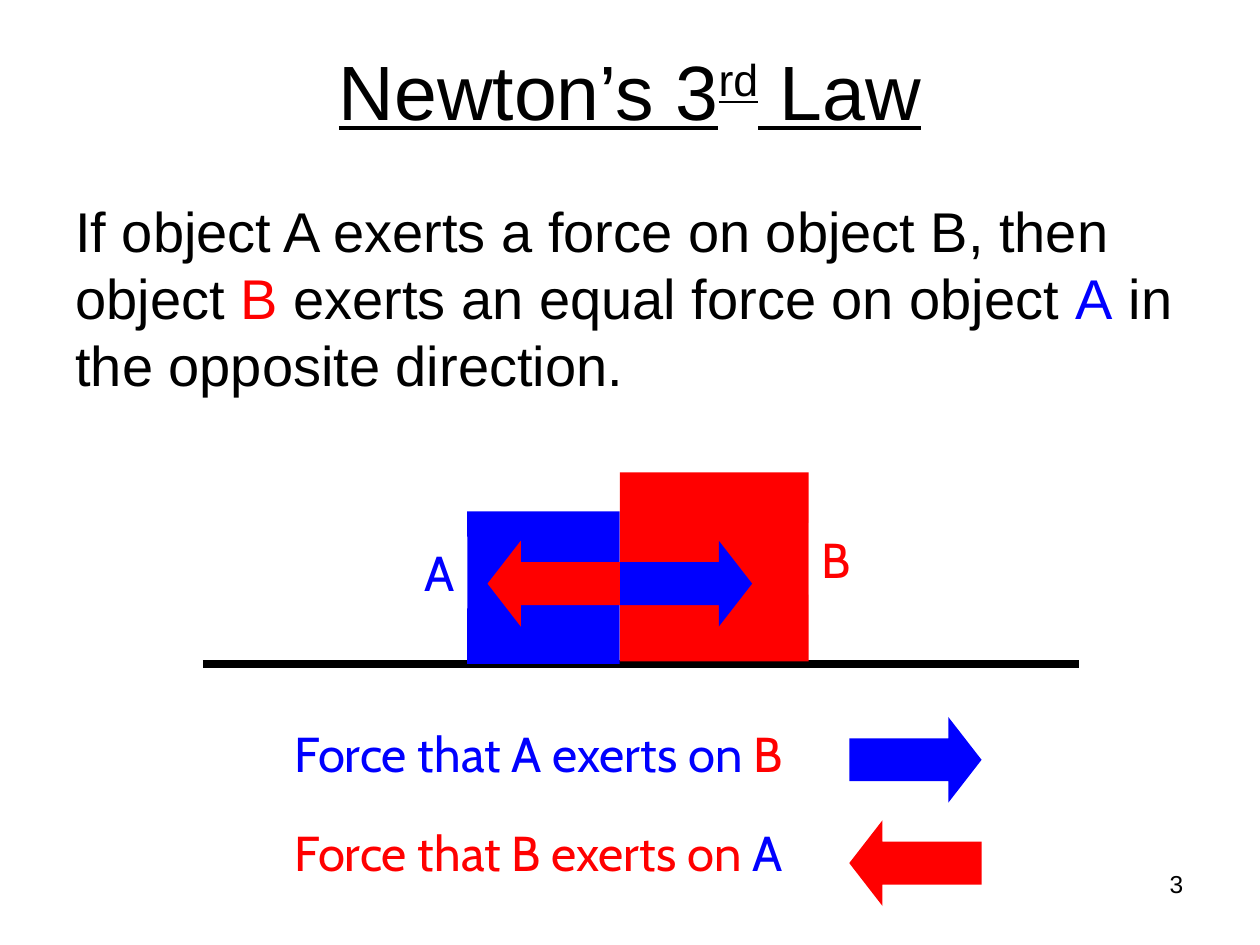
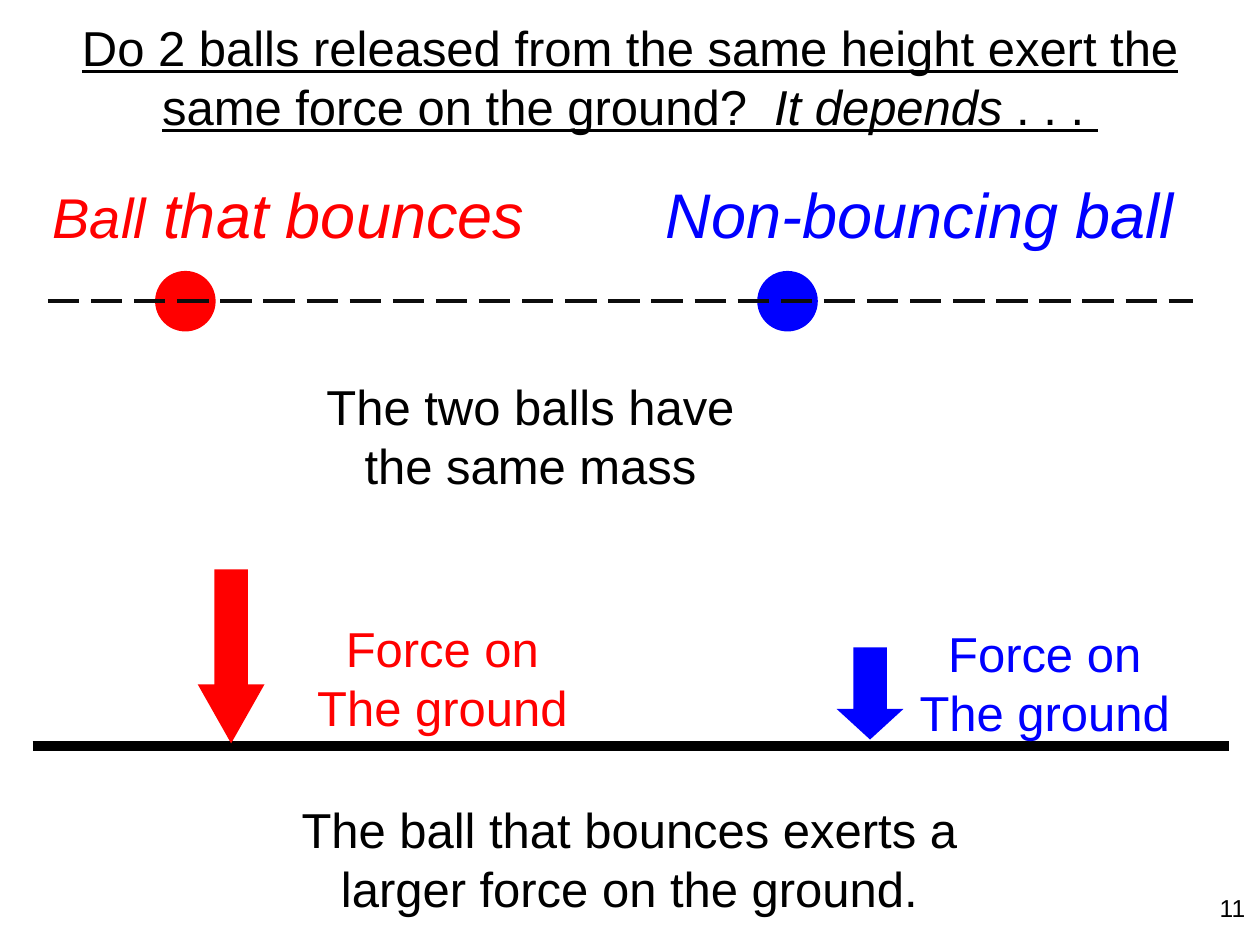
from pptx import Presentation
from pptx.dml.color import RGBColor
from pptx.enum.dml import MSO_LINE
from pptx.enum.shapes import MSO_CONNECTOR, MSO_SHAPE
from pptx.enum.text import MSO_ANCHOR, MSO_AUTO_SIZE, PP_ALIGN
from pptx.oxml.ns import qn
from pptx.util import Pt
from lxml import etree

RECTANGLE, OVAL = MSO_SHAPE.RECTANGLE, MSO_SHAPE.OVAL
RIGHT_ARROW, LEFT_ARROW = MSO_SHAPE.RIGHT_ARROW, MSO_SHAPE.LEFT_ARROW
DOWN_ARROW = MSO_SHAPE.DOWN_ARROW
STRAIGHT, LONG_DASH = MSO_CONNECTOR.STRAIGHT, MSO_LINE.LONG_DASH
LEFT, CENTER, RIGHT = PP_ALIGN.LEFT, PP_ALIGN.CENTER, PP_ALIGN.RIGHT
TOP, MIDDLE = MSO_ANCHOR.TOP, MSO_ANCHOR.MIDDLE
FIT_SHAPE = MSO_AUTO_SIZE.SHAPE_TO_FIT_TEXT

COLORS = {
    "black": "000000",
    "dash": "0D0D0D",
    "white": "FFFFFF",
    "red": "FF0000",
    "blue": "0000FF",
}
SLIDE_WIDTH, SLIDE_HEIGHT = 720, 540
FORCE_ARROW_SIZE = (75.6, 49)
FORCE_ARROW_HEAD = 0.388
CAPTION = {"size": 28, "align": CENTER}
LABEL = {"size": 28, "font": "Cabin", "fill": "white", "wrap": False}


# Shared drawing helpers
def color_of(name):
    return RGBColor.from_string(COLORS[name])


def add_text(slide, box, paragraphs, size=28, font="Arial", color="black",
             align=LEFT, anchor=TOP, underline=False, italic=False,
             fill=None, wrap=True):
    """Each paragraph is a string or a list of (text, overrides) runs."""
    shape = slide.shapes.add_textbox(*map(Pt, box))
    if fill:
        shape.fill.solid()
        shape.fill.fore_color.rgb = color_of(fill)
    frame = shape.text_frame
    frame.word_wrap = wrap
    frame.vertical_anchor = anchor
    if not wrap:
        frame.auto_size = FIT_SHAPE
    for index, runs in enumerate(paragraphs):
        paragraph = frame.add_paragraph() if index else frame.paragraphs[0]
        paragraph.alignment = align
        if isinstance(runs, str):
            runs = [(runs, {})]
        for text, changes in runs:
            run = paragraph.add_run()
            run.text = text
            run.font.name = font
            run.font.size = Pt(changes.get("size", size))
            run.font.color.rgb = color_of(changes.get("color", color))
            run.font.underline = underline
            run.font.italic = changes.get("italic", italic)
            if changes.get("superscript"):
                run._r.get_or_add_rPr().set("baseline", "30000")


def add_solid(slide, kind, box, color, adjustments=()):
    shape = slide.shapes.add_shape(kind, *map(Pt, box))
    shape.shadow.inherit = False
    shape.fill.solid()
    shape.fill.fore_color.rgb = color_of(color)
    shape.line.fill.background()
    for index, value in enumerate(adjustments):
        shape.adjustments[index] = value


def add_level_line(slide, left, right, y, width, color="black", dash=None):
    line = slide.shapes.add_connector(STRAIGHT, Pt(left), Pt(y), Pt(right), Pt(y))
    line.line.width = Pt(width)
    line.line.color.rgb = color_of(color)
    if dash:
        line.line.dash_style = dash
    etree.SubElement(line._element.spPr, qn("a:effectLst"))


def add_force_arrow(slide, kind, left, top, color):
    add_solid(slide, kind, (left, top, *FORCE_ARROW_SIZE), color,
              (0.5, FORCE_ARROW_HEAD))


def add_page_number(slide, box, number):
    add_text(slide, box, [number], size=14, align=RIGHT)


# Slide 1: Newton's third law
def draw_blocks(slide, box):
    left, top, width, height = box
    ground = top + height
    contact = left + 238.2
    small, large = 87.2, 108
    add_level_line(slide, left, left + width, ground, 4.5)
    add_solid(slide, RECTANGLE, (contact - small, ground - small, small, small), "blue")
    add_text(slide, (contact - small - 31.6, top + 36.7, 31.7, 41), ["A"],
             color="blue", **LABEL)
    add_solid(slide, RECTANGLE, (contact, top, large, large), "red")
    add_text(slide, (contact + large, top + 28.8, 31, 41), ["B"],
             color="red", **LABEL)
    # Equal and opposite forces meet at the contact face
    arrow_top = top + 39
    add_force_arrow(slide, RIGHT_ARROW, contact, arrow_top, "blue")
    add_force_arrow(slide, LEFT_ARROW, contact - FORCE_ARROW_SIZE[0], arrow_top, "red")


def draw_force_key(slide, box, actor, target, color, target_color, kind, arrow_drop):
    left, top, width, height = box
    runs = [(f"Force that {actor} exerts on ", {}), (target, {"color": target_color})]
    add_text(slide, (left, top, 316, height), [runs], color=color, **LABEL)
    add_force_arrow(slide, kind, left + width - FORCE_ARROW_SIZE[0],
                    top + arrow_drop, color)


def build_third_law(slide):
    add_text(slide, (36, 6, 648, 90),
             [[("Newton’s 3", {}), ("rd", {"superscript": True}), (" Law", {})]],
             size=44, align=CENTER, anchor=MIDDLE, underline=True)
    add_text(slide, (36, 108.7, 648, 125.3), [[
        ("If object A exerts a force on object B, then object ", {}),
        ("B", {"color": "red"}),
        (" exerts an equal force on object ", {}),
        ("A", {"color": "blue"}),
        (" in the opposite direction.", {}),
    ]], size=32)
    draw_blocks(slide, (116, 270, 500.5, 109.4))
    draw_force_key(slide, (161.3, 409.7, 399.6, 41), "A", "B", "blue", "red",
                   RIGHT_ARROW, 0)
    draw_force_key(slide, (161.3, 466.6, 399.6, 41), "B", "A", "red", "blue",
                   LEFT_ARROW, 2.1)
    add_page_number(slide, (655, 493.2, 28.3, 37.4), "3")


# Slide 2: two falling balls
def draw_ball_column(slide, box, heading, color, ball_x, arrow, label):
    left, top, width, height = box
    add_text(slide, (left, top, width, 66.2), [heading], size=36, color=color,
             italic=True, anchor=MIDDLE)
    add_solid(slide, OVAL, (left + ball_x, top + 66.2, 34.6, 34.6), color)
    # The arrow stands on the bottom of the column
    arrow_x, arrow_height, head = arrow
    add_solid(slide, DOWN_ARROW,
              (left + arrow_x, top + height - arrow_height, 38.2, arrow_height),
              color, (0.5, head))
    label_x, label_y = label
    add_text(slide, (left + label_x, top + label_y, 160, 75),
             ["Force on", "The ground"], color=color, wrap=False, **CAPTION)


def build_ball_comparison(slide):
    add_text(slide, (0, 6.5, SLIDE_WIDTH, 75), [
        "Do 2 balls released from the same height exert the",
        [("same force on the ground?  ", {}),
         ("It depends ", {"italic": True}), (". . . ", {})],
    ], underline=True, **CAPTION)
    add_level_line(slide, 18.7, 702, 426.2, 6)
    draw_ball_column(slide, (23, 88.6, 330, 336.2),
                     [("Ball", {"size": 32}), (" that bounces", {})], "red",
                     ball_x=65.6, arrow=(90, 99.4, 0.884), label=(149.8, 261.3))
    draw_ball_column(slide, (373.5, 88.6, 330, 334),
                     [("Non-bouncing ball", {})], "blue",
                     ball_x=59.2, arrow=(104.6, 52.6, 0.457), label=(143.5, 264.2))
    add_level_line(slide, 27.4, 681.8, 172.1, 2.25, "dash", LONG_DASH)
    add_text(slide, (177.8, 211.7, 250.6, 75),
             ["The two balls have", "the same mass"], wrap=False, **CAPTION)
    add_text(slide, (162.7, 453.6, 393.8, 75),
             ["The ball that bounces exerts a", "larger force on the ground."],
             wrap=False, **CAPTION)
    add_page_number(slide, (688, 506.9, 30.6, 26.6), "11")


def main():
    presentation = Presentation()
    presentation.slide_width = Pt(SLIDE_WIDTH)
    presentation.slide_height = Pt(SLIDE_HEIGHT)
    blank_layout = presentation.slide_layouts[6]
    for build in (build_third_law, build_ball_comparison):
        build(presentation.slides.add_slide(blank_layout))
    presentation.save("out.pptx")


if __name__ == "__main__":
    main()
